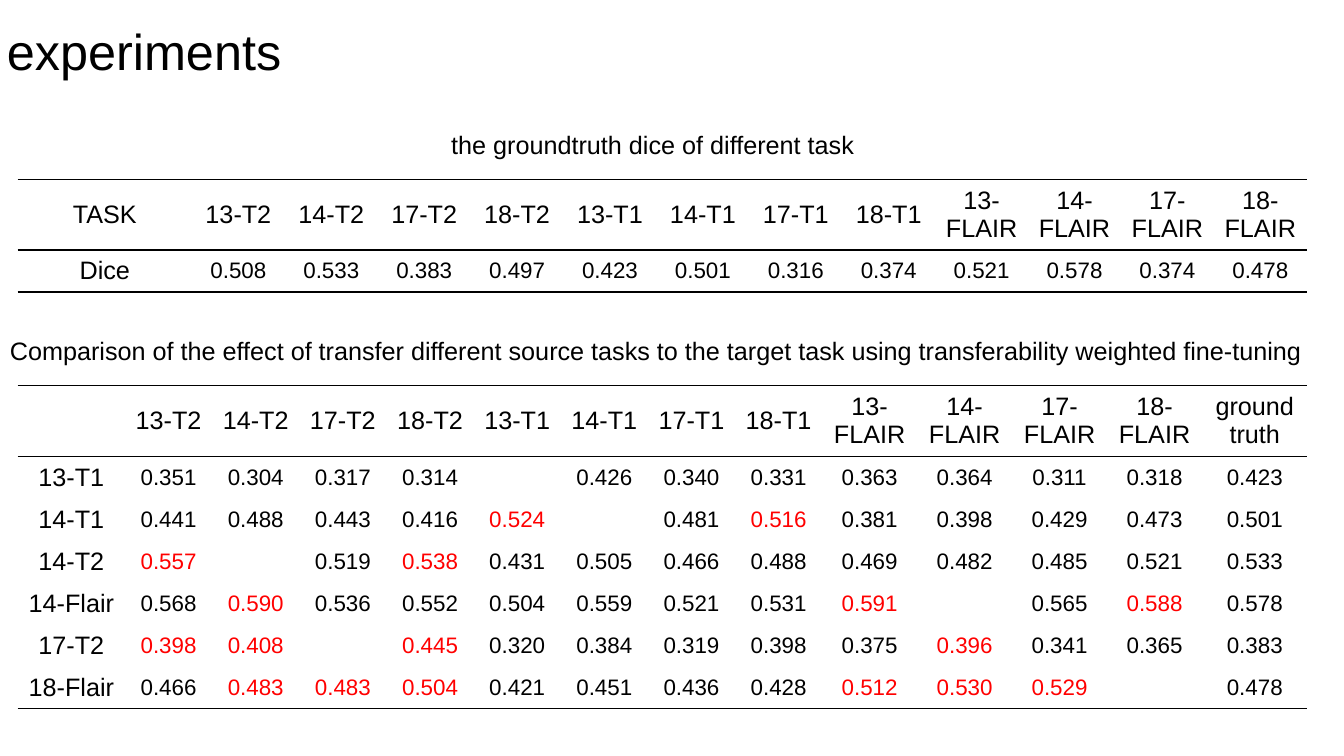
from dataclasses import dataclass

from lxml.etree import SubElement
from pptx import Presentation
from pptx.dml.color import RGBColor
from pptx.enum.text import MSO_ANCHOR as Anchor, MSO_AUTO_SIZE as AutoSize, PP_ALIGN as Align
from pptx.oxml.ns import qn
from pptx.slide import Slide
from pptx.table import _Cell as Cell
from pptx.text.text import _Paragraph as Paragraph
from pptx.util import Pt

COLOURS = {"text": "000000", "highlight": "FF0000", "rule": "000000"}
FONT = "Arial"
LABEL_SIZE, VALUE_SIZE = 18, 16
HEADER_HEIGHT, ROW_HEIGHT = 50.4, 30
TABLE_LEFT = 12.6
EMPTY = "-"  # marks a cell without a value
TASKS = [f"{year}-{scan}" for scan in ("T2", "T1", "FLAIR") for year in (13, 14, 17, 18)]


@dataclass
class TextItem:
    text: str
    left: float
    top: float
    width: float
    height: float
    size: float
    anchor: Anchor = Anchor.TOP
    auto_size: AutoSize = AutoSize.SHAPE_TO_FIT_TEXT


@dataclass
class TableItem:
    top: float
    widths: list[float]
    rows: list[list[str]]
    top_ruled: set[int]
    bottom_ruled: set[int]


TEXTS = [
    TextItem("experiments", -2.2, 0, 281.5, 71.3, 36, Anchor.MIDDLE, AutoSize.NONE),
    TextItem("the groundtruth dice of different task", 315.2, 88.8, 316.8, 29, LABEL_SIZE),
    TextItem("Comparison of the effect of transfer different source tasks to the target task "
             "using transferability weighted fine-tuning", 0, 236.2, 943.2, 29, LABEL_SIZE),
]

# A trailing * marks a highlighted value.
TRANSFER_ROWS = [
    "13-T1 0.351 0.304 0.317 0.314 - 0.426 0.340 0.331 0.363 0.364 0.311 0.318 0.423",
    "14-T1 0.441 0.488 0.443 0.416 0.524* - 0.481 0.516* 0.381 0.398 0.429 0.473 0.501",
    "14-T2 0.557* - 0.519 0.538* 0.431 0.505 0.466 0.488 0.469 0.482 0.485 0.521 0.533",
    "14-Flair 0.568 0.590* 0.536 0.552 0.504 0.559 0.521 0.531 0.591* - 0.565 0.588* 0.578",
    "17-T2 0.398* 0.408* - 0.445* 0.320 0.384 0.319 0.398 0.375 0.396* 0.341 0.365 0.383",
    "18-Flair 0.466 0.483* 0.483* 0.504* 0.421 0.451 0.436 0.428 0.512* 0.530* 0.529* - 0.478",
]
DICE_ROW = "Dice 0.508 0.533 0.383 0.497 0.423 0.501 0.316 0.374 0.521 0.578 0.374 0.478"

TABLES = [
    TableItem(128.2, [124.5] + [66.36] * 12,
              [["TASK", *TASKS], DICE_ROW.split()], {0, 1}, {0, 1}),
    TableItem(275.6, [76.7] + [62.25] * 8 + [67.86] * 4 + [75.3],
              [[EMPTY, *TASKS, "groundtruth"], *(row.split() for row in TRANSFER_ROWS)],
              {0, 1}, {0, len(TRANSFER_ROWS)}),
]


def add_span(para: Paragraph, text: str, size: float, colour: str = "text") -> None:
    span = para.add_run()
    span.text = text
    span.font.name = FONT
    span.font.size = Pt(size)
    span.font.color.rgb = RGBColor.from_string(COLOURS[colour])


def set_borders(cell: Cell, ruled_sides: set[str]) -> None:
    """Draw a thin rule on the given sides (T, B) and clear the others."""
    properties = cell._tc.get_or_add_tcPr()
    for side in "LRTB":
        line = SubElement(properties, qn(f"a:ln{side}"), w=str(Pt(1)))
        if side in ruled_sides:
            fill = SubElement(line, qn("a:solidFill"))
            SubElement(fill, qn("a:srgbClr"), val=COLOURS["rule"])
        else:
            SubElement(line, qn("a:noFill"))


def add_text(page: Slide, item: TextItem) -> None:
    box = page.shapes.add_textbox(Pt(item.left), Pt(item.top), Pt(item.width), Pt(item.height))
    frame = box.text_frame
    frame.word_wrap = True
    frame.auto_size = item.auto_size
    frame.vertical_anchor = item.anchor
    add_span(frame.paragraphs[0], item.text, item.size)


def add_table(page: Slide, item: TableItem) -> None:
    heights = [HEADER_HEIGHT] + [ROW_HEIGHT] * (len(item.rows) - 1)
    table = page.shapes.add_table(len(heights), len(item.widths), Pt(TABLE_LEFT), Pt(item.top),
                                  Pt(sum(item.widths)), Pt(sum(heights))).table
    table.first_row = table.horz_banding = False
    for column, width in zip(table.columns, item.widths):
        column.width = Pt(width)
    for row, height in zip(table.rows, heights):
        row.height = Pt(height)

    for row_index, row in enumerate(item.rows):
        sides = {side for side, ruled in (("T", item.top_ruled), ("B", item.bottom_ruled))
                 if row_index in ruled}
        for column_index, entry in enumerate(row):
            cell = table.cell(row_index, column_index)
            set_borders(cell, sides)
            cell.fill.background()
            cell.vertical_anchor = Anchor.MIDDLE
            para = cell.text_frame.paragraphs[0]
            para.alignment = Align.CENTER
            if entry != EMPTY:
                is_label = row_index == 0 or column_index == 0
                add_span(para, entry.rstrip("*"), LABEL_SIZE if is_label else VALUE_SIZE,
                         "highlight" if entry.endswith("*") else "text")


def main() -> None:
    deck = Presentation()
    deck.slide_width, deck.slide_height = Pt(960), Pt(540)
    page = deck.slides.add_slide(deck.slide_layouts[6])
    for table_item in TABLES:
        add_table(page, table_item)
    for text_item in TEXTS:
        add_text(page, text_item)
    deck.save("out.pptx")


if __name__ == "__main__":
    main()
